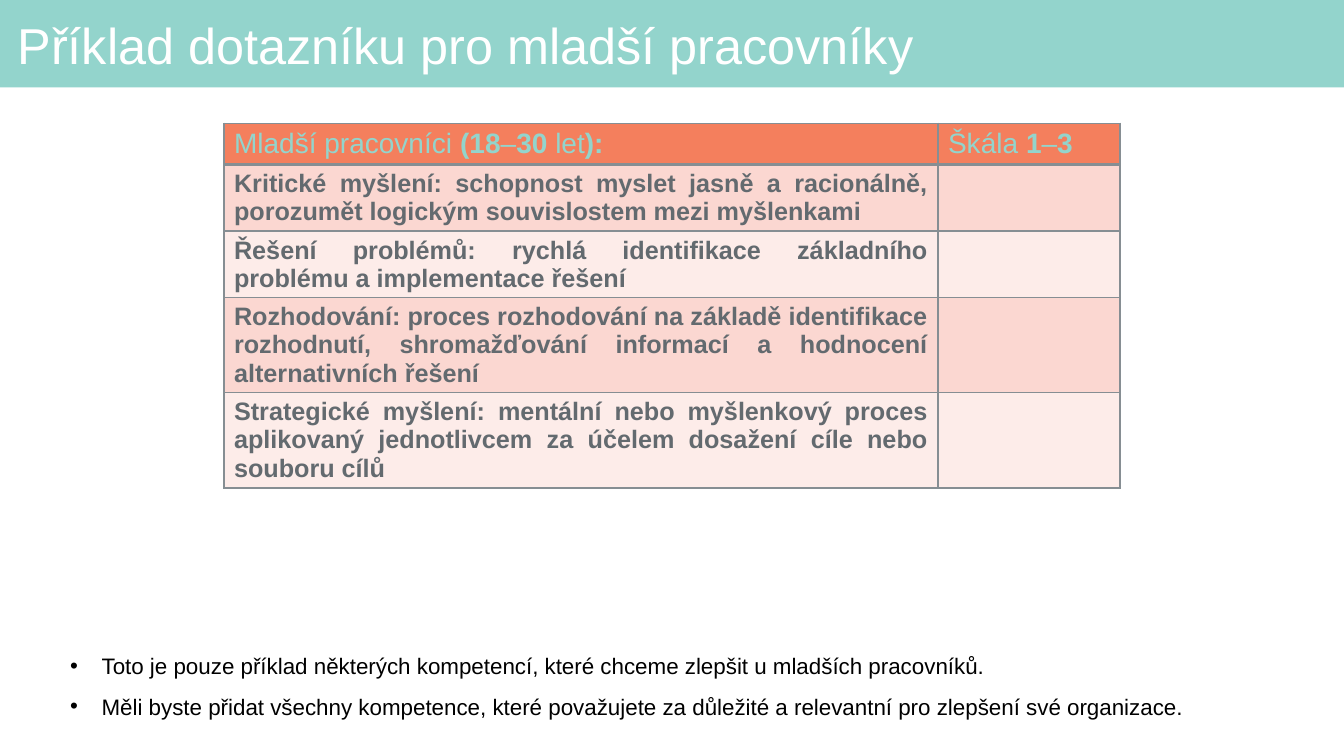
from lxml import etree
from pptx import Presentation
from pptx.dml.color import RGBColor
from pptx.enum.shapes import MSO_SHAPE
from pptx.enum.text import MSO_ANCHOR, PP_ALIGN
from pptx.oxml.ns import qn
from pptx.util import Pt

RECTANGLE = MSO_SHAPE.RECTANGLE
MIDDLE, TOP = MSO_ANCHOR.MIDDLE, MSO_ANCHOR.TOP
LEFT, JUSTIFY = PP_ALIGN.LEFT, PP_ALIGN.JUSTIFY

FONT = "Arial"
COLORS = {
    "teal": "93D4CC",
    "orange": "F47F5D",
    "rose": "FBD7D1",
    "blush": "FDECE9",
    "gray": "636A6F",
    "border": "868E93",
    "white": "FFFFFF",
    "black": "000000",
}

TITLE = "Příklad dotazníku pro mladší pracovníky"
HEADINGS = [
    [("Mladší pracovníci ", False), ("(18", True), ("–", False), ("30", True),
     (" let", False), ("):", True)],
    [("Škála ", False), ("1", True), ("–", False), ("3", True)],
]
COMPETENCES = [
    "Kritické myšlení: schopnost myslet jasně a racionálně, "
    "porozumět logickým souvislostem mezi myšlenkami",
    "Řešení problémů: rychlá identifikace základního problému a implementace řešení",
    "Rozhodování: proces rozhodování na základě identifikace rozhodnutí, "
    "shromažďování informací a hodnocení alternativních řešení",
    "Strategické myšlení: mentální nebo myšlenkový proces aplikovaný jednotlivcem "
    "za účelem dosažení cíle nebo souboru cílů",
]
REMARKS = [
    "Toto je pouze příklad některých kompetencí, které chceme zlepšit u mladších pracovníků.",
    "Měli byste přidat všechny kompetence, které považujete za důležité "
    "a relevantní pro zlepšení své organizace.",
]
COLUMN_WIDTHS = [510, 130]
ROW_HEIGHTS = [29.5, 47.5, 47.5, 68, 68]


def rgb(name):
    return RGBColor.from_string(COLORS[name])


def style_run(run, size, color, bold=False):
    run.font.name = FONT
    run.font.size = Pt(size)
    run.font.bold = bold
    run.font.color.rgb = rgb(color)


def set_insets(frame, horizontal, vertical):
    frame.margin_left = frame.margin_right = Pt(horizontal)
    frame.margin_top = frame.margin_bottom = Pt(vertical)


def add_header(slide, left, top, width, height):
    band = slide.shapes.add_shape(RECTANGLE, Pt(left), Pt(top), Pt(width), Pt(height))
    band.shadow.inherit = False
    band.fill.solid()
    band.fill.fore_color.rgb = rgb("teal")
    band.line.fill.background()
    slide.shapes._spTree.insert(2, band._element)

    title = slide.shapes.title
    title.left, title.top = Pt(left + 8), Pt(top + 6.5)
    title.width, title.height = Pt(width - 20), Pt(height - 6.5)
    frame = title.text_frame
    frame.text = TITLE
    frame.word_wrap = True
    frame.vertical_anchor = MIDDLE
    set_insets(frame, 4.5, 4.5)
    paragraph = frame.paragraphs[0]
    paragraph.alignment = LEFT
    paragraph.line_spacing = 0.9
    style_run(paragraph.runs[0], 36, "white")


def set_borders(cell, top_width, bottom_width):
    properties = cell._tc.get_or_add_tcPr()
    widths = {"a:lnL": 1, "a:lnR": 1, "a:lnT": top_width, "a:lnB": bottom_width}
    for position, (side, width) in enumerate(widths.items()):
        line = etree.Element(qn(side), w=str(Pt(width)))
        fill = etree.SubElement(line, qn("a:solidFill"))
        etree.SubElement(fill, qn("a:srgbClr"), val=COLORS["border"])
        properties.insert(position, line)


def add_questionnaire(slide, left, top, width, height):
    table = slide.shapes.add_table(
        len(ROW_HEIGHTS), len(COLUMN_WIDTHS), Pt(left), Pt(top), Pt(width), Pt(height)
    ).table
    for column, column_width in zip(table.columns, COLUMN_WIDTHS):
        column.width = Pt(column_width)
    for index, (row, row_height) in enumerate(zip(table.rows, ROW_HEIGHTS)):
        row.height = Pt(row_height)
        fill = "orange" if index == 0 else ("blush", "rose")[index % 2]
        for cell in row.cells:
            cell.fill.solid()
            cell.fill.fore_color.rgb = rgb(fill)
            cell.vertical_anchor = MIDDLE
            set_borders(cell, 3 if index == 1 else 1, 3 if index == 0 else 1)

    for column, heading in enumerate(HEADINGS):
        paragraph = table.cell(0, column).text_frame.paragraphs[0]
        paragraph.alignment = LEFT if column else JUSTIFY
        for text, bold in heading:
            run = paragraph.add_run()
            run.text = text
            style_run(run, 20, "teal", bold)

    for index, competence in enumerate(COMPETENCES, start=1):
        cell = table.cell(index, 0)
        cell.text_frame.text = competence
        paragraph = cell.text_frame.paragraphs[0]
        paragraph.alignment = JUSTIFY
        style_run(paragraph.runs[0], 18, "gray", True)
    table.cell(len(COMPETENCES), 0).vertical_anchor = TOP


def add_bullet(paragraph):
    properties = paragraph._p.get_or_add_pPr()
    properties.set("marL", str(Pt(22.5)))
    properties.set("indent", str(-Pt(22.5)))
    color = etree.SubElement(properties, qn("a:buClr"))
    etree.SubElement(color, qn("a:srgbClr"), val=COLORS["black"])
    etree.SubElement(properties, qn("a:buFont"), typeface=FONT)
    etree.SubElement(properties, qn("a:buChar"), char="•")


def add_remarks(slide, left, top, width, height):
    frame = slide.shapes.add_textbox(Pt(left), Pt(top), Pt(width), Pt(height)).text_frame
    frame.word_wrap = True
    set_insets(frame, 7.2, 3.6)
    frame.text = "\n".join(REMARKS)
    for paragraph in frame.paragraphs:
        paragraph.line_spacing = 1.5
        add_bullet(paragraph)
        style_run(paragraph.runs[0], 16, "black")


def main():
    presentation = Presentation()
    presentation.slide_width, presentation.slide_height = Pt(960), Pt(540)
    slide = presentation.slides.add_slide(presentation.slide_layouts[5])
    add_header(slide, 0, 0, 960, 62.5)
    add_questionnaire(slide, 160, 88, sum(COLUMN_WIDTHS), sum(ROW_HEIGHTS))
    add_remarks(slide, 43, 453, 901, 55.5)
    presentation.save("out.pptx")


if __name__ == "__main__":
    main()
